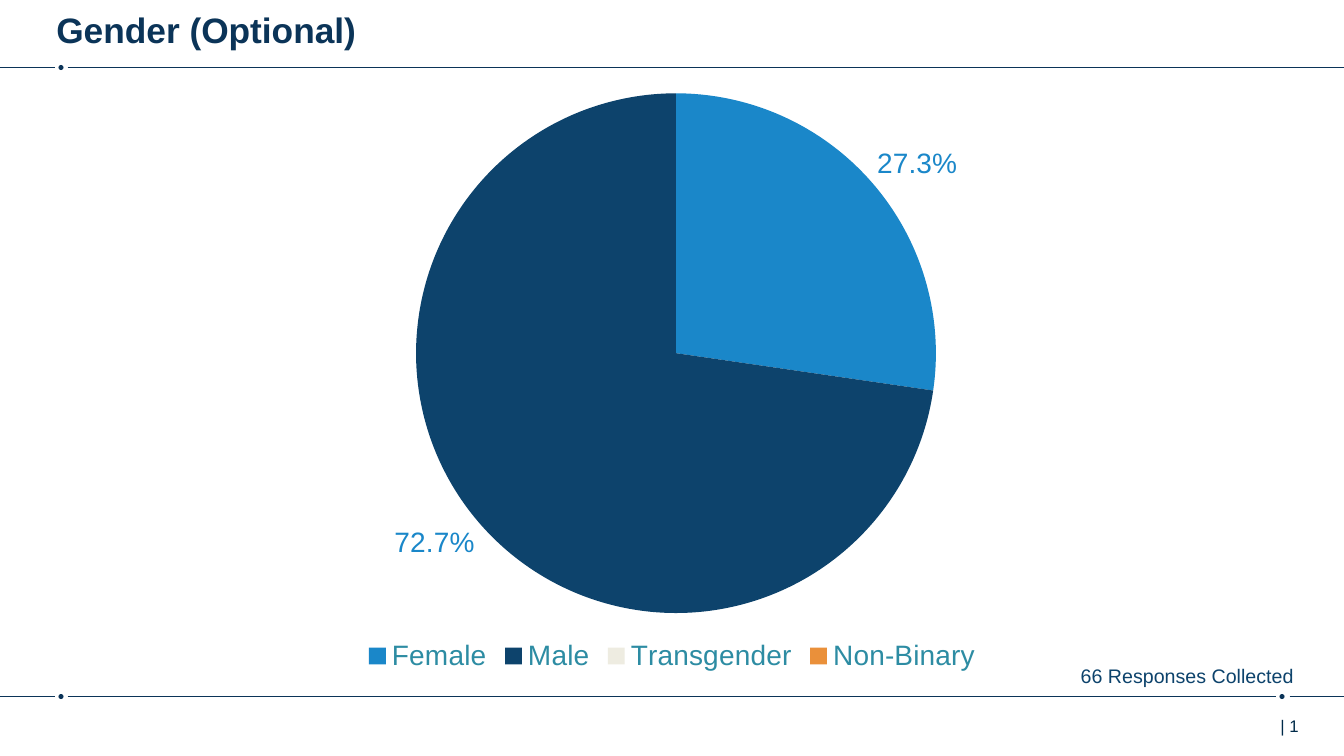
from lxml import etree
from pptx import Presentation
from pptx.chart.data import CategoryChartData
from pptx.dml.color import RGBColor
from pptx.enum.chart import XL_CHART_TYPE, XL_LABEL_POSITION, XL_LEGEND_POSITION
from pptx.enum.shapes import MSO_CONNECTOR, MSO_SHAPE
from pptx.enum.text import MSO_ANCHOR
from pptx.oxml import parse_xml
from pptx.oxml.ns import nsdecls, qn
from pptx.util import Inches, Pt

FONT = "Arial"
COLORS = {
    "rule": "0B3458",
    "number": "002B49",
    "note": "0D436C",
    "chart": "0A1F24",
    "legend": "2D8CA3",
    "label": "1A87C9",
}
# answer: (share, slice colour)
GENDERS = {
    "Female": (0.273, "1A87C9"),
    "Male": (0.727, "0D436C"),
    "Transgender": (0, "EEECE1"),
    "Non-Binary": (0, "EA903A"),
}
DOT_SIZE = 0.05
HEADER_Y, FOOTER_Y = 0.67, 6.91
SLIDE_WIDTH = 13.33


def style_font(font, size, color, bold=False):
    font.name = FONT
    font.size = Pt(size)
    font.bold = bold
    font.color.rgb = RGBColor.from_string(COLORS[color])


def add_text(s, text, box, size, color, bold=False, left_inset=0.1,
             anchor=MSO_ANCHOR.TOP):
    tf = s.shapes.add_textbox(*map(Inches, box)).text_frame
    tf.word_wrap = True
    tf.vertical_anchor = anchor
    tf.margin_left = Inches(left_inset)
    tf.text = text
    style_font(tf.paragraphs[0].runs[0].font, size, color, bold)


def add_rule(s, x1, x2, y):
    line = s.shapes.add_connector(
        MSO_CONNECTOR.STRAIGHT, Inches(x1), Inches(y), Inches(x2), Inches(y))
    line.line.color.rgb = RGBColor.from_string(COLORS["rule"])
    line.line.width = Pt(1)
    etree.SubElement(line._element.spPr, qn("a:effectLst"))


def add_dot(s, x, y):
    dot = s.shapes.add_shape(
        MSO_SHAPE.OVAL, Inches(x), Inches(y - DOT_SIZE / 2),
        Inches(DOT_SIZE), Inches(DOT_SIZE))
    dot.shadow.inherit = False
    dot.fill.solid()
    dot.fill.fore_color.rgb = RGBColor.from_string(COLORS["rule"])
    dot.line.fill.background()


def set_plot_layout(chart, x, y, w, h):
    """Fix the inner plot area, in fractions of the chart frame."""
    plot_area = chart._chartSpace.chart.plotArea
    for old in plot_area.findall(qn("c:layout")):
        plot_area.remove(old)
    plot_area.insert(0, parse_xml(
        f'<c:layout {nsdecls("c")}><c:manualLayout>'
        '<c:layoutTarget val="inner"/>'
        '<c:xMode val="edge"/><c:yMode val="edge"/>'
        f'<c:x val="{x}"/><c:y val="{y}"/><c:w val="{w}"/><c:h val="{h}"/>'
        '</c:manualLayout></c:layout>'))


def add_gender_pie(s, box):
    data = CategoryChartData(number_format="0.0%")
    data.categories = list(GENDERS)
    data.add_series("Series 1", [share for share, _ in GENDERS.values()])
    chart = s.shapes.add_chart(
        XL_CHART_TYPE.PIE, *map(Inches, box), data).chart
    chart.has_title = False
    style_font(chart.font, 10, "chart")
    set_plot_layout(chart, 0.2145, 0.0228, 0.58, 0.87)

    chart.has_legend = True
    chart.legend.position = XL_LEGEND_POSITION.BOTTOM
    chart.legend.include_in_layout = False
    style_font(chart.legend.font, 20, "legend")

    plot = chart.plots[0]
    plot.vary_by_categories = True
    for i, (_, color) in enumerate(GENDERS.values()):
        fill = plot.series[0].points[i].format.fill
        fill.solid()
        fill.fore_color.rgb = RGBColor.from_string(color)

    plot.has_data_labels = True
    labels = plot.data_labels
    labels.show_value = True
    labels.show_percentage = False
    labels.number_format = "0.0%;;"  # zero shares get no label
    labels.number_format_is_linked = False
    labels.position = XL_LABEL_POSITION.OUTSIDE_END
    style_font(labels.font, 20, "label")


def main():
    prs = Presentation()
    prs.slide_width, prs.slide_height = Inches(SLIDE_WIDTH), Inches(7.5)
    s = prs.slides.add_slide(prs.slide_layouts[6])

    add_text(s, "| 1", (12.56, 7.05, 0.77, 0.4), 12, "number", left_inset=0.14)
    for y, right_end in ((HEADER_Y, SLIDE_WIDTH), (FOOTER_Y, 12.66)):
        add_dot(s, 0.58, y)
        add_rule(s, 0, 0.55, y)
        add_rule(s, 0.67, right_end, y)
    add_dot(s, 12.69, FOOTER_Y)
    add_rule(s, 12.79, SLIDE_WIDTH, FOOTER_Y)

    add_text(s, "Gender (Optional)", (0.46, 0.05, 11.82, 0.49), 25.2, "rule",
             bold=True, anchor=MSO_ANCHOR.MIDDLE)
    add_gender_pie(s, (2.22, 0.79, 8.89, 5.93))
    add_text(s, "66 Responses Collected", (10.62, 6.54, 2.38, 0.34), 14, "note")
    prs.save("out.pptx")


if __name__ == "__main__":
    main()
